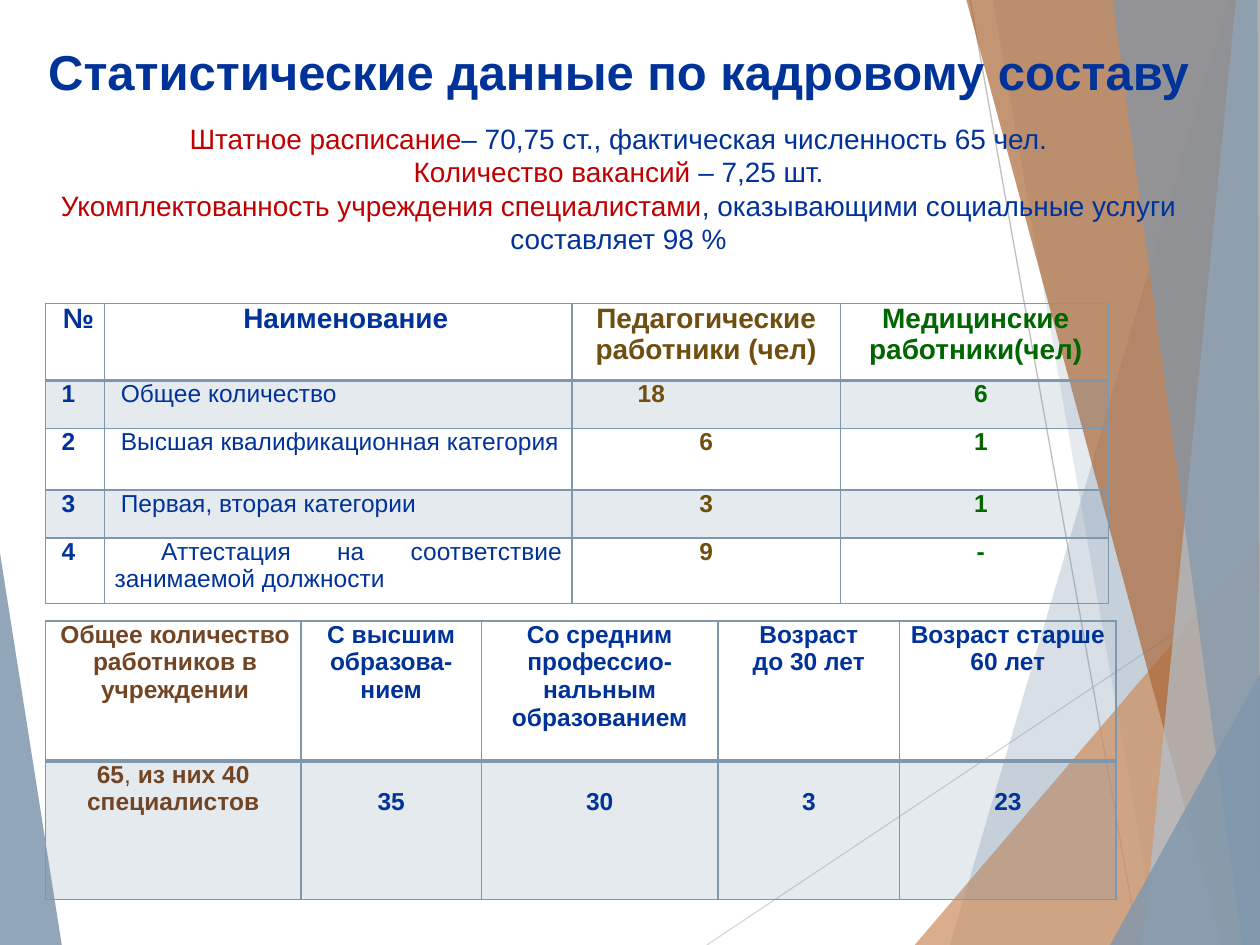
from lxml import etree
from pptx import Presentation
from pptx import util as u
from pptx.dml.color import RGBColor
from pptx.enum import shapes, text
from pptx.oxml.ns import qn

STEEL = RGBColor(0x7E, 0x97, 0xAD)
MIST = RGBColor(0xB2, 0xC1, 0xCE)
COPPER = RGBColor(0xCC, 0x8E, 0x60)
RUST = RGBColor(0xAA, 0x68, 0x37)
SILVER = RGBColor(0xD9, 0xD9, 0xD9)
GREY = RGBColor(0xBF, 0xBF, 0xBF)
BLUE = RGBColor(0x00, 0x33, 0x99)
RED = RGBColor(0xC0, 0x00, 0x00)
OCHRE = RGBColor(0x6E, 0x4F, 0x10)
GREEN = RGBColor(0x00, 0x66, 0x00)
BROWN = RGBColor(0x72, 0x45, 0x24)
FONT = "Arial"
LEFT, CENTER, JUSTIFY = text.PP_ALIGN.LEFT, text.PP_ALIGN.CENTER, text.PP_ALIGN.JUSTIFY


def paint(fill, color, opacity):
    """Fill with a colour at the given opacity in percent."""
    fill.solid()
    fill.fore_color.rgb = color
    for node in fill._xPr.iter(qn("a:srgbClr")):
        etree.SubElement(node, qn("a:alpha"), val=str(opacity * 1000))


def add_facet(page, points, color, opacity):
    """Draw one translucent polygon from points in inches."""
    corners = [(u.Inches(x), u.Inches(y)) for x, y in points]
    builder = page.shapes.build_freeform(*corners[0])
    builder.add_line_segments(corners[1:], close=True)
    facet = builder.convert_to_shape()
    facet.shadow.inherit = False
    facet.line.fill.background()
    paint(facet.fill, color, opacity)


def add_ray(page, start, end, color):
    """Draw one thin straight line between two points in inches."""
    ends = [u.Inches(value) for value in (*start, *end)]
    ray = page.shapes.add_connector(shapes.MSO_CONNECTOR.STRAIGHT, *ends)
    ray.line.color.rgb = color
    ray.line.width = u.Pt(0.75)
    etree.SubElement(ray._element.spPr, qn("a:effectLst"))


def add_backdrop(page, width, height):
    """Draw the facets and rays along the slide edges."""
    add_facet(page, [(0, 4.39), (0.49, height), (0, height)], STEEL, 85)
    add_ray(page, (5.61, height), (width, 4.57), SILVER)
    add_ray(page, (7.7, 0), (9.04, height), GREY)
    corner, top_corner = (width, height), (width, 0)
    facets = [
        ([(9.75, 0), (7.54, height), corner, top_corner], STEEL, 30),
        ([(7.88, 0), (9.19, height), corner, top_corner], STEEL, 20),
        ([(7.26, height), (width, 4.29), corner], COPPER, 72),
        ([(7.67, 0), (9.7, height), corner, top_corner], RUST, 70),
        ([(9.81, 0), (9.07, height), corner, top_corner], MIST, 70),
        ([(8.83, 0), (9.86, height), corner, (9.98, 0)], STEEL, 65),
        ([(8.81, height), (width, 5.35), corner], STEEL, 80),
    ]
    for points, color, opacity in facets:
        add_facet(page, points, color, opacity)


def write(para, spans, size, bold, align):
    """Write coloured spans into a paragraph."""
    para.alignment = align
    para.font.name, para.font.size, para.font.bold = FONT, u.Pt(size), bold
    for words, color in spans:
        span = para.add_run()
        span.text = words
        span.font.color.rgb = color


def add_heading(page, left, top, width, height):
    """Write the title and the staffing summary below it."""
    box = page.shapes.add_textbox(*map(u.Inches, (left, top, width, height)))
    frame = box.text_frame
    frame.word_wrap = True
    write(frame.paragraphs[0], [("Статистические данные по кадровому составу", BLUE)],
          28, True, CENTER)
    summary = [
        ("Штатное расписание", "– 70,75 ст., фактическая численность 65 чел."),
        ("Количество вакансий ", "– 7,25 шт."),
        ("Укомплектованность учреждения специалистами",
         ", оказывающими социальные услуги составляет 98 %"),
    ]
    for index, (label, value) in enumerate(summary):
        para = frame.add_paragraph()
        para.space_before = u.Pt(0 if index else 12)
        write(para, [(label, RED), (value, BLUE)], 16, False, CENTER)


def add_borders(cell, top, bottom):
    """Outline a cell, with the top and bottom widths in points."""
    sides = [("a:lnL", 1), ("a:lnR", 1), ("a:lnT", top), ("a:lnB", bottom)]
    for index, (tag, points) in enumerate(sides):
        line = etree.Element(qn(tag), w=str(u.Pt(points)))
        solid = etree.SubElement(line, qn("a:solidFill"))
        etree.SubElement(solid, qn("a:srgbClr"), val=str(STEEL))
        cell._tc.get_or_add_tcPr().insert(index, line)


def add_grid(page, left, top, widths, heights):
    """Add a ruled table whose odd rows are tinted."""
    area = map(u.Inches, (left, top, sum(widths), sum(heights)))
    table = page.shapes.add_table(len(heights), len(widths), *area).table
    table.first_row = table.horz_banding = False
    for column, width in zip(table.columns, widths):
        column.width = u.Inches(width)
    for index, (row, height) in enumerate(zip(table.rows, heights)):
        row.height = u.Inches(height)
        for cell in row.cells:
            if index % 2:
                paint(cell.fill, STEEL, 20)
            else:
                cell.fill.background()
            add_borders(cell, 2 if index == 1 else 1, 1 if index else 2)
            cell.margin_left = cell.margin_right = u.Inches(0.08)
            cell.margin_top = cell.margin_bottom = 0
    return table


def fill_cell(cell, lines, color, size=14, bold=True, align=CENTER, inset=0.08):
    """Write lines of one colour into a cell."""
    cell.margin_left = u.Inches(inset)
    for index, words in enumerate(lines.split("\n")):
        para = cell.text_frame.add_paragraph() if index else cell.text_frame.paragraphs[0]
        write(para, [(words, color)], size, bold, align)


def add_category_table(page, left, top):
    """Add the table of qualification categories by staff group."""
    table = add_grid(page, left, top, [0.47, 3.71, 2.13, 2.13],
                     [0.61, 0.38, 0.49, 0.38, 0.52])
    colors = [BLUE, BLUE, OCHRE, GREEN]
    header = ["№", "Наименование", "Педагогические\nработники (чел)",
              "Медицинские работники(чел)"]
    for column, words in enumerate(header):
        fill_cell(table.cell(0, column), words, colors[column], 16,
                  align=CENTER if column else LEFT, inset=[0.14, 0.2, 0.08, 0.1][column])
    rows = [
        ("1", "Общее количество", "18", "6"),
        ("2", "Высшая квалификационная категория", "6", "1"),
        ("3", "Первая, вторая категории", "3", "1"),
        ("4", "Аттестация на соответствие занимаемой должности", "9", "-"),
    ]
    for row, values in enumerate(rows, 1):
        for column, words in enumerate(values):
            fill_cell(table.cell(row, column), words, colors[column],
                      bold=column != 1, align=CENTER if column > 1 else JUSTIFY,
                      inset=[0.13, 0.13, 0.08, 0.18][column])
    table.cell(1, 2).margin_right = u.Inches(0.95)
    last_name = table.cell(4, 1)
    last_name.margin_left = u.Inches(0.08)
    para = last_name.text_frame.paragraphs[0]
    para._p.get_or_add_pPr().set("indent", str(u.Inches(0.37)))


def add_staff_table(page, left, top):
    """Add the table of education and age totals."""
    table = add_grid(page, left, top, [2.03, 1.43, 1.88, 1.44, 1.72], [1.11, 1.1])
    columns = [
        ("С высшим образова-нием", "35"),
        ("Со средним профессио-нальным образованием", "30"),
        ("Возраст\nдо 30 лет", "3"),
        ("Возраст старше 60 лет", "23"),
    ]
    fill_cell(table.cell(0, 0), "Общее количество работников в учреждении", BROWN,
              inset=0.11)
    total = table.cell(1, 0).text_frame.paragraphs[0]
    parts = ["65", ", ", "из них 40 специалистов"]
    write(total, [(words, BROWN) for words in parts], 14, True, CENTER)
    total.runs[1].font.bold = False
    for column, (label, value) in enumerate(columns, 1):
        fill_cell(table.cell(0, column), label, BLUE)
        fill_cell(table.cell(1, column), value, BLUE)
        table.cell(1, column).margin_top = u.Inches(0.22)


def main():
    """Build the deck and save it."""
    deck = Presentation()
    deck.slide_width, deck.slide_height = u.Inches(10), u.Inches(7.5)
    page = deck.slides.add_slide(deck.slide_layouts[6])
    add_backdrop(page, 10, 7.5)
    add_heading(page, 0.01, 0.28, 9.8, 1.8)
    add_category_table(page, 0.36, 2.41)
    add_staff_table(page, 0.36, 4.93)
    deck.save("out.pptx")


if __name__ == "__main__":
    main()
